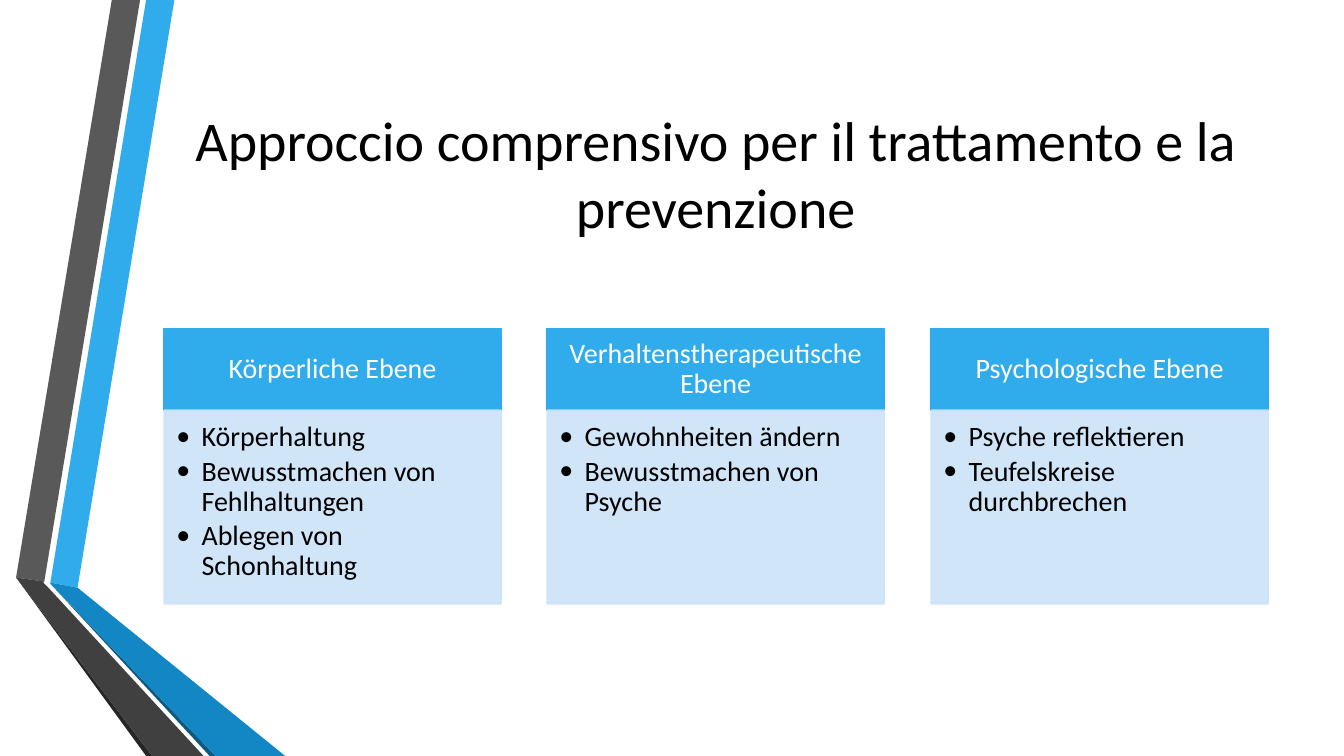
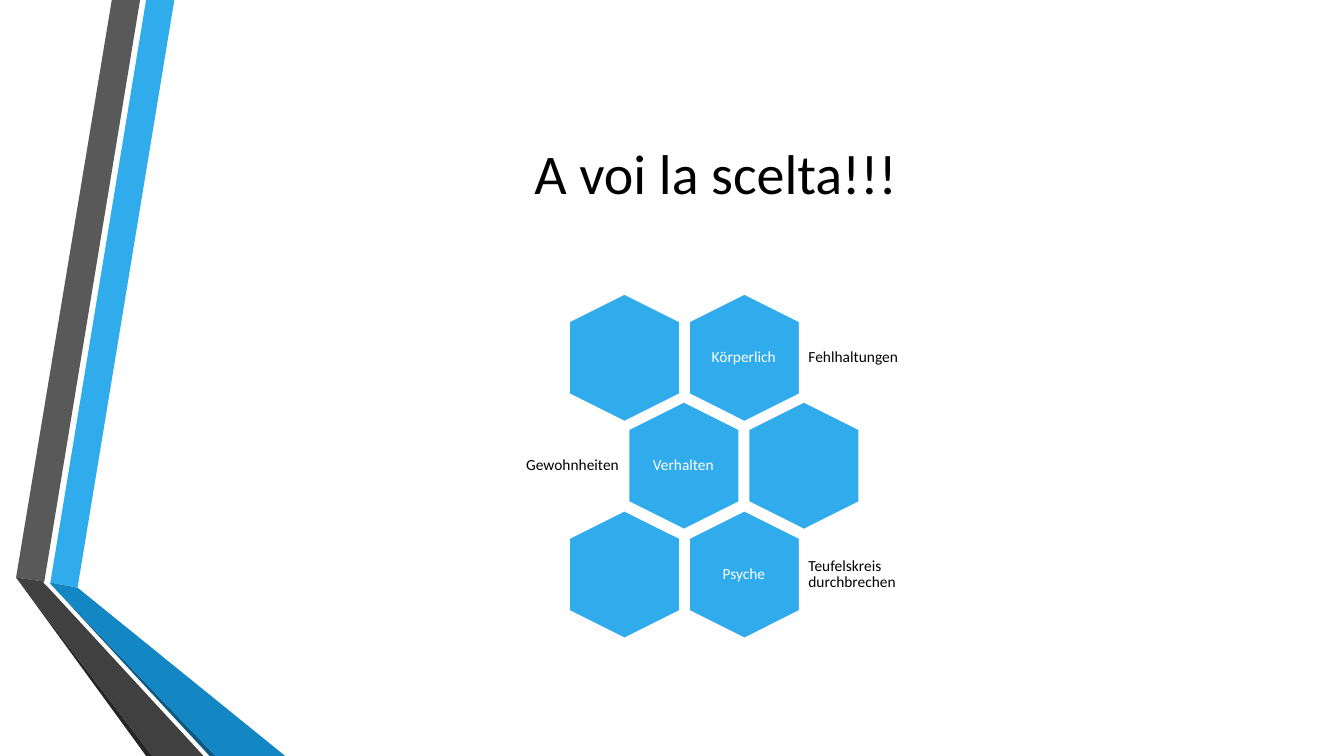
from lxml import etree
from pptx import Presentation, util as u
from pptx.dml import color as c
from pptx.enum import shapes, text
from pptx.oxml import ns

PX = 9144  # EMU per px, 100 px to the inch
FONT = "Calibri"
COLORS = {
    "blue": "30ACEC", "mid blue": "1287C3", "deep blue": "0C5A82", "pale blue": "CDE3F8",
    "gray": "595959", "dark gray": "404040", "deep gray": "262626",
    "black": "000000", "white": "FFFFFF",
}
LEFT, CENTER, RIGHT = text.PP_ALIGN.LEFT, text.PP_ALIGN.CENTER, text.PP_ALIGN.RIGHT
TOP, MIDDLE = text.MSO_ANCHOR.TOP, text.MSO_ANCHOR.MIDDLE

# margins in px: left, top, right, bottom
TITLE = dict(size=40, color="black", margins=(10, 5, 10, 5), anchor=MIDDLE,
             para=dict(alignment=CENTER))
HEADING = dict(size=20, color="white", margins=(16, 9, 16, 9), anchor=MIDDLE,
               para=dict(alignment=CENTER, line_spacing=0.9))
POINTS = dict(size=20, color="black", margins=(12, 12, 16, 17), anchor=TOP, bullet_indent=25,
              para=dict(alignment=LEFT, line_spacing=0.9, space_after=u.Pt(3)))
HEX_LABEL = dict(HEADING, size=11, margins=(5, 5, 5, 5))
SIDE_LABEL = dict(HEX_LABEL, color="black")

RIBBONS = [
    ("blue", [(50, 578), (77, 583), (173, 0), (145, 0)]),
    ("gray", [(139, 0), (111, 0), (16, 573), (44, 577)]),
    ("deep gray", [(16, 573), (145, 750), (151, 750)]),
    ("deep blue", [(50, 579), (208, 750), (214, 750)]),
    ("mid blue", [(50, 579), (214, 750), (283, 750), (77, 583), (50, 578)]),
    ("dark gray", [(202, 750), (48, 583), (43, 578), (44, 577), (16, 573), (151, 750)]),
]

COLUMNS = [
    ("Körperliche Ebene",
     ["Körperhaltung", "Bewusstmachen von Fehlhaltungen", "Ablegen von Schonhaltung"]),
    ("Verhaltenstherapeutische Ebene",
     ["Gewohnheiten ändern", "Bewusstmachen von Psyche"]),
    ("Psychologische Ebene",
     ["Psyche reflektieren", "Teufelskreise durchbrechen"]),
]

# each row: left of first hexagon, labelled hexagon, its label,
# offset and width of the side text, its alignment, the side text
HEX_ROWS = [
    (556, 1, "Körperlich", 122, 141, LEFT, "Fehlhaltungen"),
    (615, 0, "Verhalten", -133, 137, RIGHT, "Gewohnheiten"),
    (556, 1, "Psyche", 122, 141, LEFT, "Teufelskreis durchbrechen"),
]


def paint(shape, fill, line=None, opacity=100):
    shape.shadow.inherit = False
    shape.fill.solid()
    shape.fill.fore_color.rgb = c.RGBColor.from_string(COLORS[fill])
    if line:
        shape.line.color.rgb = c.RGBColor.from_string(COLORS[line])
        shape.line.width = u.Pt(1.25)
    else:
        shape.line.fill.background()
    if opacity < 100:
        for color in shape._element.spPr.iter(ns.qn("a:srgbClr")):
            etree.SubElement(color, ns.qn("a:alpha"), val=str(opacity * 1000))


def write(shape, lines, style):
    """Fill a shape with one paragraph per line, bulleted if the style has a bullet indent."""
    frame = shape.text_frame
    frame.word_wrap = True
    frame.vertical_anchor = style["anchor"]
    for side, margin in zip(("left", "top", "right", "bottom"), style["margins"]):
        setattr(frame, f"margin_{side}", margin * PX)
    for number, line in enumerate(lines):
        para = frame.add_paragraph() if number else frame.paragraphs[0]
        for name, value in style["para"].items():
            setattr(para, name, value)
        if "bullet_indent" in style:
            indent = style["bullet_indent"] * PX
            props = para._p.get_or_add_pPr()
            props.set("marL", str(indent))
            props.set("indent", str(-indent))
            etree.SubElement(props, ns.qn("a:buFont"), typeface=FONT)
            etree.SubElement(props, ns.qn("a:buChar"), char="•")
        span = para.add_run()
        span.text = line
        span.font.name = FONT
        span.font.size = u.Pt(style["size"])
        span.font.color.rgb = c.RGBColor.from_string(COLORS[style["color"]])


deck = Presentation()
deck.slide_width, deck.slide_height = u.Emu(12192000), u.Emu(750 * PX)

pages = []
for title in ("Approccio comprensivo per il trattamento e la prevenzione", "A voi la scelta!!!"):
    page = deck.slides.add_slide(deck.slide_layouts[6])
    for color, points in RIBBONS:
        outline = page.shapes.build_freeform(*points[0], scale=PX)
        outline.add_line_segments(points[1:], close=True)
        paint(outline.convert_to_shape(), color)
    box = page.shapes.add_textbox(162 * PX, 75 * PX, 1096 * PX, 192 * PX)
    write(box, [title], TITLE)
    pages.append(page)
levels_page, choice_page = pages

# Three columns: heading above bullet points
for number, (heading, points) in enumerate(COLUMNS):
    left = 163 + number * 761 // 2
    for top, height, fill, opacity, lines, style in (
        (326, 81, "blue", 100, [heading], HEADING),
        (407, 192, "pale blue", 90, points, POINTS),
    ):
        box = levels_page.shapes.add_shape(
            shapes.MSO_SHAPE.RECTANGLE, left * PX, top * PX, 334 * PX, height * PX)
        paint(box, fill, fill, opacity)
        write(box, lines, style)

# Honeycomb: two hexagons per row, one of them labelled
for row, (first, labelled, label, offset, width, align, side_text) in enumerate(HEX_ROWS):
    top = 300 + row * 215 // 2
    for column in range(2):
        hexagon = choice_page.shapes.add_shape(
            shapes.MSO_SHAPE.HEXAGON, (first + column * 119) * PX, top * PX, 127 * PX, 110 * PX)
        hexagon.rotation = 90
        paint(hexagon, "blue", "white")
    left = first + labelled * 119
    box = choice_page.shapes.add_textbox((left + 25) * PX, (top + 11) * PX, 76 * PX, 87 * PX)
    write(box, [label], HEX_LABEL)
    box = choice_page.shapes.add_textbox(
        (left + offset) * PX, (top + 17) * PX, width * PX, 76 * PX)
    write(box, [side_text], dict(SIDE_LABEL, para=dict(alignment=align, line_spacing=0.9)))

deck.save("out.pptx")
